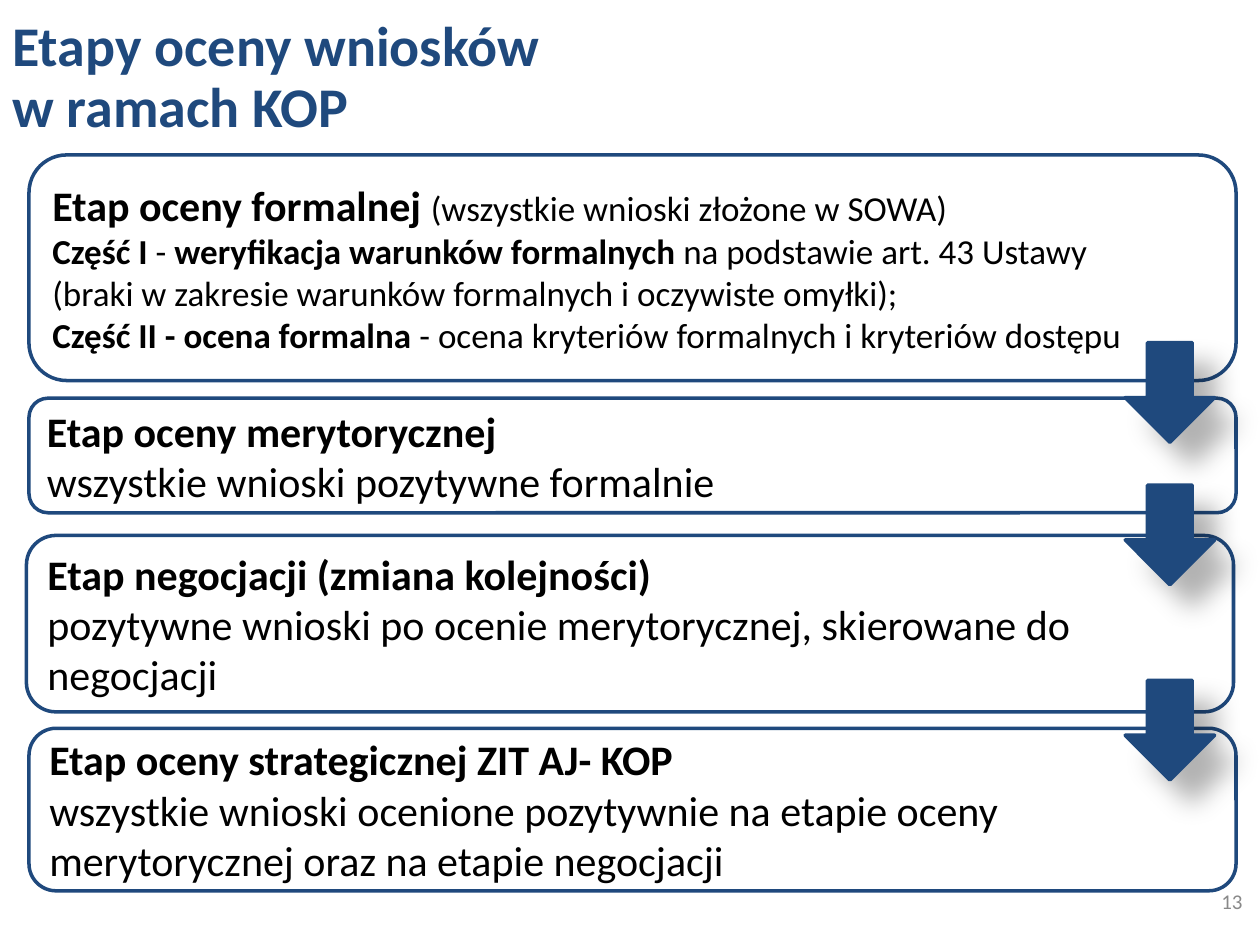
from lxml.etree import SubElement
from pptx import Presentation
from pptx.dml.color import RGBColor
from pptx.enum.shapes import MSO_SHAPE
from pptx.enum.text import MSO_ANCHOR, PP_ALIGN
from pptx.oxml.ns import qn
from pptx.util import Inches, Pt

COLORS = {"navy": "1F497D", "black": "000000", "white": "FFFFFF", "gray": "898989"}
FONT = "Calibri"
CELL = 0.1  # inches per grid column and row
BOX_LEFT, BOX_WIDTH = 2.3, 95.8
ARROW_LEFT, ARROW_WIDTH, ARROW_HEIGHT = 89.3, 7.1, 7.9

# Each stage: left, top, height, paragraphs; a paragraph lists (text, size, bold) runs.
STAGES = [
    (BOX_LEFT, 12.3, 17.9, [
        [("Etap oceny formalnej ", 24, True), ("(wszystkie wnioski złożone w SOWA)", 20, False)],
        [("Część I ", 20, True), ("- ", 20, False),
         ("weryfikacja warunków formalnych ", 20, True),
         ("na podstawie art. 43 Ustawy", 20, False)],
        [("(braki w zakresie warunków formalnych i oczywiste omyłki);", 20, False)],
        [("Część II - ocena formalna ", 20, True),
         ("- ocena kryteriów formalnych i kryteriów dostępu", 20, False)],
    ]),
    (BOX_LEFT, 31.6, 9.1, [
        [("Etap oceny merytorycznej", 24, True)],
        [("wszystkie wnioski pozytywne formalnie", 24, False)],
    ]),
    (2.1, 42.5, 14, [
        [("Etap negocjacji (zmiana kolejności)", 24, True)],
        [("pozytywne wnioski po ocenie merytorycznej, skierowane do negocjacji", 24, False)],
    ]),
    (BOX_LEFT, 57.8, 12.9, [
        [("Etap oceny strategicznej ZIT AJ- KOP", 24, True)],
        [("wszystkie wnioski ocenione pozytywnie na etapie oceny "
          "merytorycznej oraz na etapie negocjacji", 24, False)],
    ]),
]
ARROW_TOPS = [27.2, 38.5, 54]


def color(name):
    return RGBColor.from_string(COLORS[name])


def grid(*cells):
    return [Inches(cell * CELL) for cell in cells]


def write(frame, paragraphs, color_name="black", align=PP_ALIGN.LEFT, line_spacing=None):
    """Fill the frame; a newline inside a run becomes a line break."""
    frame.word_wrap = True
    frame.vertical_anchor = MSO_ANCHOR.MIDDLE
    for index, runs in enumerate(paragraphs):
        paragraph = frame.add_paragraph() if index else frame.paragraphs[0]
        paragraph.alignment = align
        paragraph.line_spacing = line_spacing
        for text, size, bold in runs:
            for number, line in enumerate(text.split("\n")):
                if number:
                    paragraph.add_line_break()
                run = paragraph.add_run()
                run.text = line
                run.font.name = FONT
                run.font.size = Pt(size)
                run.font.bold = bold
                run.font.color.rgb = color(color_name)


def add_soft_shadow(shape):
    effects = shape._element.spPr.find(qn("a:effectLst"))
    shadow = SubElement(effects, qn("a:outerShdw"), blurRad=str(Pt(15)), dist=str(Pt(18)),
                        dir=str(45 * 60000), algn="tl", rotWithShape="0")
    shade = SubElement(shadow, qn("a:srgbClr"), val=COLORS["black"])
    SubElement(shade, qn("a:alpha"), val="30000")


class StageSlide:
    def __init__(self, slide, line="navy", line_width=2):
        self.slide = slide
        self.line = line
        self.line_width = line_width

    def label(self, cells, runs, **text_format):
        box = self.slide.shapes.add_textbox(*grid(*cells))
        write(box.text_frame, [runs], **text_format)

    def outlined(self, kind, cells, fill):
        shape = self.slide.shapes.add_shape(kind, *grid(*cells))
        shape.shadow.inherit = False
        shape.fill.solid()
        shape.fill.fore_color.rgb = color(fill)
        shape.line.color.rgb = color(self.line)
        shape.line.width = Pt(self.line_width)
        return shape

    def stage(self, left, top, height, paragraphs):
        cells = (left, top, BOX_WIDTH, height)
        box = self.outlined(MSO_SHAPE.ROUNDED_RECTANGLE, cells, "white")
        write(box.text_frame, paragraphs)

    def arrow(self, top):
        cells = (ARROW_LEFT, top, ARROW_WIDTH, ARROW_HEIGHT)
        add_soft_shadow(self.outlined(MSO_SHAPE.DOWN_ARROW, cells, "navy"))


def main():
    presentation = Presentation()
    presentation.slide_width, presentation.slide_height = grid(100, 75)
    page = StageSlide(presentation.slides.add_slide(presentation.slide_layouts[6]))
    page.label((0, 0, 90.2, 12.5), [("Etapy oceny wniosków\nw ramach KOP", 32, True)],
               color_name="navy", line_spacing=0.9)
    for stage in STAGES:
        page.stage(*stage)
    for top in ARROW_TOPS:
        page.arrow(top)
    page.label((76.3, 69.5, 23.3, 4), [("13", 12, False)],
               color_name="gray", align=PP_ALIGN.RIGHT)
    presentation.save("out.pptx")


if __name__ == "__main__":
    main()
